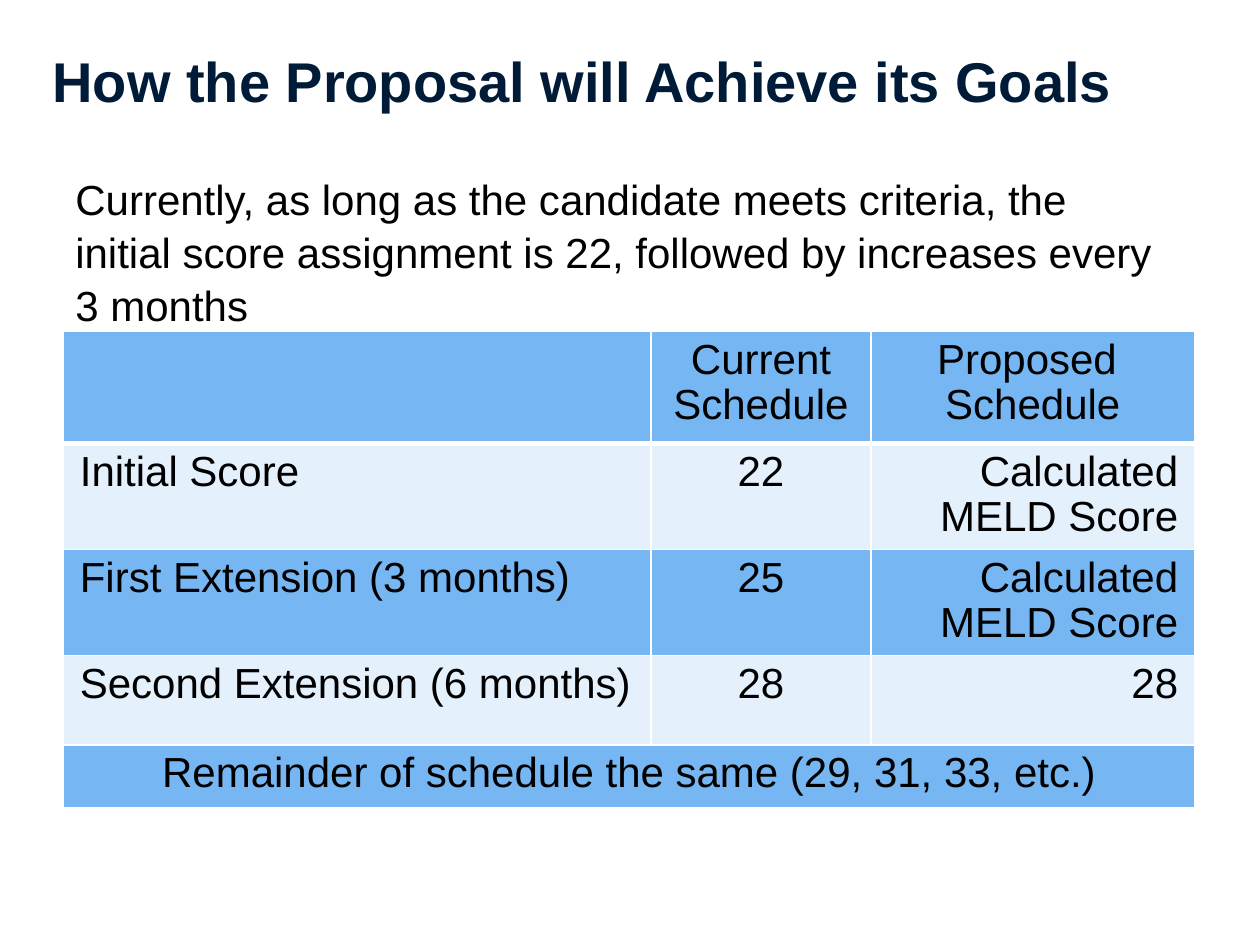
"""Builds the slide that compares the current and proposed score schedules."""
from dataclasses import dataclass

from lxml.etree import SubElement
from pptx import Presentation
from pptx.dml.color import RGBColor
from pptx.enum.text import MSO_ANCHOR, PP_ALIGN
from pptx.oxml.ns import qn
from pptx.util import Cm, Pt


@dataclass(frozen=True)
class Theme:
    font: str = "Arial"
    title_size: int = 32
    body_size: int = 24
    title_color: str = "001B37"
    body_color: str = "000000"
    band_fills: tuple = ("76B6F2", "E4F0FC")
    border_color: str = "FFFFFF"
    border_width: int = 1
    header_rule_width: int = 3
    body_spacing: float = 1.05
    cell_spacing: float = 0.97


class SlideBuilder:
    def __init__(self, slide, theme):
        self.slide = slide
        self.theme = theme

    def fill_frame(self, frame, text, size, color, bold=False, alignment=PP_ALIGN.LEFT, spacing=1.0):
        for index, line in enumerate(text.split("\n")):
            paragraph = frame.add_paragraph() if index else frame.paragraphs[0]
            paragraph.alignment = alignment
            paragraph.line_spacing = spacing
            paragraph.font.size = Pt(size)
            if not line:
                continue
            run = paragraph.add_run()
            run.text = line
            run.font.name = self.theme.font
            run.font.size = Pt(size)
            run.font.bold = bold
            run.font.color.rgb = RGBColor.from_string(color)

    def add_text(self, text, left, top, width, height, anchor=MSO_ANCHOR.TOP, **style):
        shape = self.slide.shapes.add_textbox(Cm(left), Cm(top), Cm(width), Cm(height))
        frame = shape.text_frame
        frame.word_wrap = True
        frame.vertical_anchor = anchor
        self.fill_frame(frame, text, **style)

    def add_borders(self, cell, bottom_width):
        properties = cell._tc.get_or_add_tcPr()
        for side in "LRTB":
            width = bottom_width if side == "B" else self.theme.border_width
            line = SubElement(properties, qn(f"a:ln{side}"), w=str(Pt(width)))
            fill = SubElement(line, qn("a:solidFill"))
            SubElement(fill, qn("a:srgbClr"), val=self.theme.border_color)

    def style_cell(self, cell, row_index):
        theme = self.theme
        cell.margin_left = cell.margin_right = Cm(0.33)
        cell.margin_top = cell.margin_bottom = Cm(0.13)
        self.add_borders(cell, theme.border_width if row_index else theme.header_rule_width)
        cell.fill.solid()
        cell.fill.fore_color.rgb = RGBColor.from_string(theme.band_fills[row_index % 2])

    def add_table(self, rows, left, top, column_widths, row_heights):
        theme = self.theme
        table = self.slide.shapes.add_table(
            len(row_heights), len(column_widths), Cm(left), Cm(top),
            Cm(sum(column_widths)), Cm(sum(row_heights))).table
        for column, width in zip(table.columns, column_widths):
            column.width = Cm(width)
        for row, height in zip(table.rows, row_heights):
            row.height = Cm(height)
        body_alignments = (PP_ALIGN.LEFT, PP_ALIGN.CENTER, PP_ALIGN.RIGHT)
        for row_index, texts in enumerate(rows):
            spans_table = len(texts) == 1
            centered = row_index == 0 or spans_table
            if spans_table:
                table.cell(row_index, 0).merge(table.cell(row_index, len(column_widths) - 1))
            for column_index in range(len(column_widths)):
                self.style_cell(table.cell(row_index, column_index), row_index)
            for column_index, text in enumerate(texts):
                self.fill_frame(
                    table.cell(row_index, column_index).text_frame, text,
                    theme.body_size, theme.body_color, spacing=theme.cell_spacing,
                    alignment=PP_ALIGN.CENTER if centered else body_alignments[column_index])


def main():
    presentation = Presentation()
    presentation.slide_width = Cm(25.4)
    presentation.slide_height = Cm(19.05)
    theme = Theme()
    builder = SlideBuilder(presentation.slides.add_slide(presentation.slide_layouts[6]), theme)

    schedule = (
        ("", "Current Schedule", "Proposed \nSchedule"),
        ("Initial Score", "22", "Calculated MELD Score"),
        ("First Extension (3 months)", "25", "Calculated MELD Score"),
        ("Second Extension (6 months)", "28", "28"),
        ("Remainder of schedule the same (29, 31, 33, etc.)",),
    )
    builder.add_table(schedule, 1.28, 6.68, (11.84, 4.44, 6.52), (2.26, 2.14, 2.14, 1.8, 1.26))
    builder.add_text(
        "How the Proposal will Achieve its Goals", 0.81, 0.43, 24.28, 2.36,
        anchor=MSO_ANCHOR.MIDDLE, size=theme.title_size, color=theme.title_color, bold=True)
    builder.add_text(
        "Currently, as long as the candidate meets criteria, the initial score assignment is 22, "
        "followed by increases every 3 months", 1.27, 3.33, 22.28, 3.33,
        size=theme.body_size, color=theme.body_color, spacing=theme.body_spacing)
    presentation.save("out.pptx")


if __name__ == "__main__":
    main()
